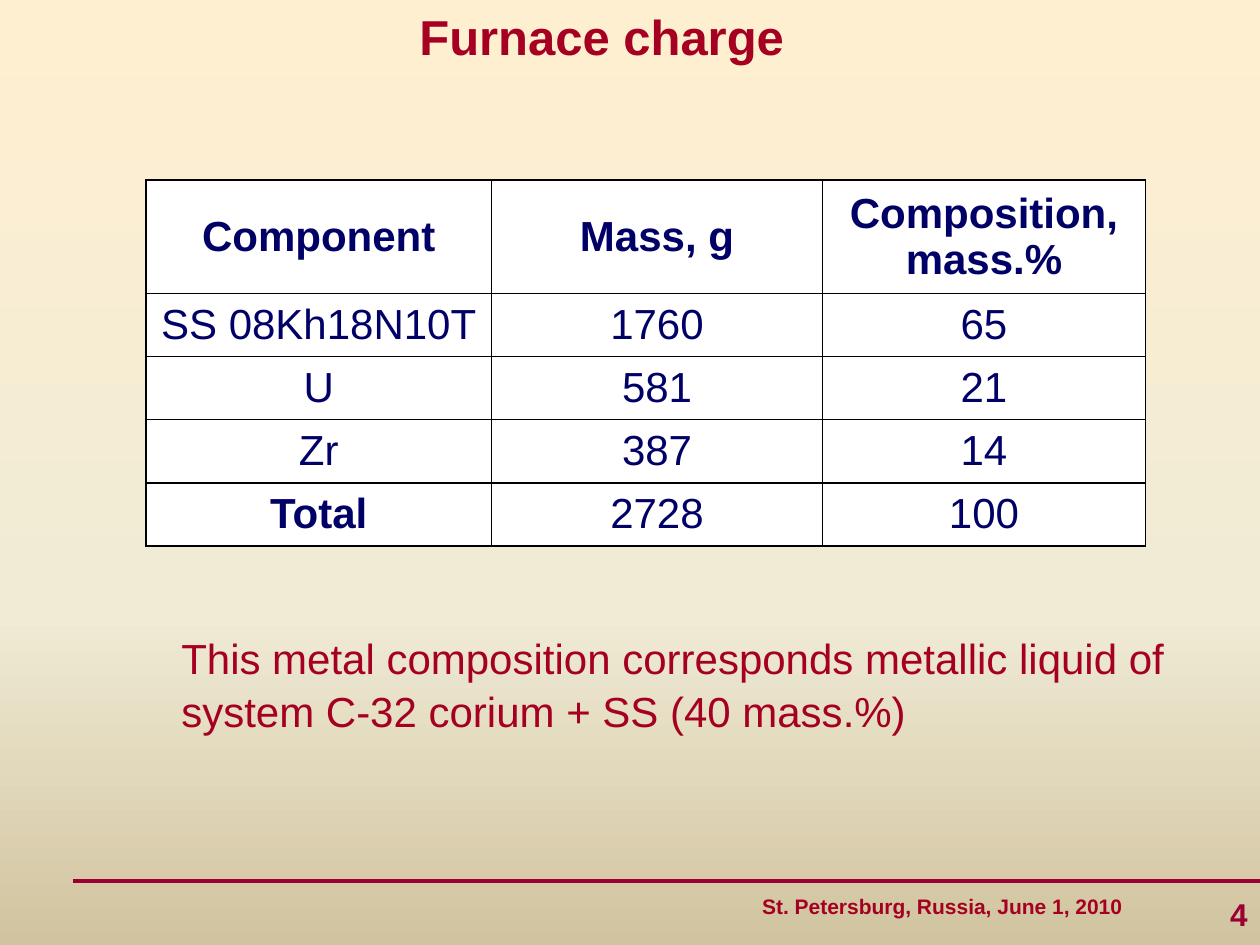
import copy

import pptx
import pptx.dml.color
import pptx.enum.shapes
import pptx.enum.text
import pptx.oxml
import pptx.oxml.ns
import pptx.util

RGBColor = pptx.dml.color.RGBColor
CRIMSON = RGBColor(0xA5, 0x00, 0x21)
MAROON = RGBColor(0x99, 0x00, 0x33)
NAVY = RGBColor(0x00, 0x00, 0x66)
BLACK = RGBColor(0x00, 0x00, 0x00)
WHITE = RGBColor(0xFF, 0xFF, 0xFF)
CREAM = RGBColor(0xFF, 0xEF, 0xD1)
IVORY = RGBColor(0xF0, 0xEB, 0xD5)
SAND = RGBColor(0xD1, 0xC3, 0x9F)
BACKDROP = [(0, CREAM), (0.65, IVORY), (1, SAND)]

SLIDE_WIDTH = pptx.util.Inches(10)
SLIDE_HEIGHT = pptx.util.Inches(7.5)
GRID_COLUMNS, GRID_ROWS = 100, 75

ALIGN = pptx.enum.text.PP_ALIGN
ANCHOR = pptx.enum.text.MSO_ANCHOR

CHARGE = [
    ["Component", "Mass, g", "Composition, mass.%"],
    ["SS 08Kh18N10T", "1760", "65"],
    ["U", "581", "21"],
    ["Zr", "387", "14"],
    ["Total", "2728", "100"],
]
CHARGE_COLUMNS = [27.4, 26.3, 25.6]
CHARGE_ROWS = [9, 5, 5, 5, 5]


def columns(count):
    return round(SLIDE_WIDTH * count / GRID_COLUMNS)


def rows(count):
    return round(SLIDE_HEIGHT * count / GRID_ROWS)


def area(left, top, width, height):
    return columns(left), rows(top), columns(width), rows(height)


def apply(target, values):
    for name, value in values.items():
        setattr(target, name, value)


def write(frame, wording, size, color, bold=False, align=ALIGN.LEFT, spacing=1.0):
    paragraph = frame.paragraphs[0]
    apply(paragraph, {"alignment": align, "line_spacing": spacing})
    run = paragraph.add_run()
    run.text = wording
    apply(run.font, {"name": "Arial", "size": pptx.util.Pt(size), "bold": bold})
    run.font.color.rgb = color


def add_text(slide, place, wording, size, color, wrap=True, anchor=ANCHOR.TOP, **style):
    frame = slide.shapes.add_textbox(*area(*place)).text_frame
    apply(frame, {"word_wrap": wrap, "vertical_anchor": anchor})
    write(frame, wording, size, color, **style)


def paint_background(slide):
    fill = slide.background.fill
    fill.gradient()
    fill.gradient_angle = 270
    stop_list = slide.element.find(".//" + pptx.oxml.ns.qn("a:gsLst"))
    stop_list.insert(1, copy.deepcopy(stop_list[0]))
    for stop, (position, color) in zip(fill.gradient_stops, BACKDROP):
        stop.position = position
        stop.color.rgb = color


def add_rule(slide, left, right, level):
    rule = slide.shapes.add_connector(
        pptx.enum.shapes.MSO_CONNECTOR.STRAIGHT,
        columns(left), rows(level), columns(right), rows(level),
    )
    rule.line.color.rgb = MAROON
    rule.line.width = pptx.util.Pt(2.25)
    effects = pptx.oxml.parse_xml(f"<a:effectLst {pptx.oxml.ns.nsdecls('a')}/>")
    rule.element.spPr.append(effects)


def add_borders(cell):
    properties = cell._tc.get_or_add_tcPr()
    for position, side in enumerate(("lnL", "lnR", "lnT", "lnB")):
        border = pptx.oxml.parse_xml(
            f"<a:{side} {pptx.oxml.ns.nsdecls('a')} w='{pptx.util.Pt(1)}'>"
            f"<a:solidFill><a:srgbClr val='{BLACK}'/></a:solidFill></a:{side}>"
        )
        properties.insert(position, border)


def add_charge_table(slide, left, top):
    place = area(left, top, sum(CHARGE_COLUMNS), sum(CHARGE_ROWS))
    table = slide.shapes.add_table(len(CHARGE), len(CHARGE[0]), *place).table
    apply(table, {"first_row": False, "horz_banding": False})
    for column, width in zip(table.columns, CHARGE_COLUMNS):
        column.width = columns(width)
    for row, height in zip(table.rows, CHARGE_ROWS):
        row.height = rows(height)
    for row_index, entries in enumerate(CHARGE):
        for column_index, entry in enumerate(entries):
            cell = table.cell(row_index, column_index)
            cell.vertical_anchor = ANCHOR.MIDDLE
            cell.fill.solid()
            cell.fill.fore_color.rgb = WHITE
            add_borders(cell)
            heading = row_index == 0 or entry == "Total"
            write(cell.text_frame, entry, 24, NAVY, bold=heading, align=ALIGN.CENTER)


def main():
    presentation = pptx.Presentation()
    apply(presentation, {"slide_width": SLIDE_WIDTH, "slide_height": SLIDE_HEIGHT})
    slide = presentation.slides.add_slide(presentation.slide_layouts[6])
    paint_background(slide)
    add_rule(slide, 5.8, GRID_COLUMNS, 69.9)
    add_text(slide, (59.5, 70.4, 30.6, 3), "St. Petersburg, Russia, June 1, 2010",
             12, CRIMSON, wrap=False, bold=True, align=ALIGN.CENTER)
    add_text(slide, (79.2, 70, 20.8, 5), "4", 18, MAROON,
             anchor=ANCHOR.MIDDLE, bold=True, align=ALIGN.RIGHT)
    add_text(slide, (25, 0, 45.5, 6.9), "Furnace charge", 28, CRIMSON,
             bold=True, align=ALIGN.CENTER)
    add_text(slide, (13.4, 49.5, 81.2, 15.1),
             "This metal composition corresponds metallic liquid of "
             "system C-32 corium + SS (40 mass.%)", 24, CRIMSON, spacing=1.05)
    add_charge_table(slide, 11.6, 14.3)
    presentation.save("out.pptx")


if __name__ == "__main__":
    main()
